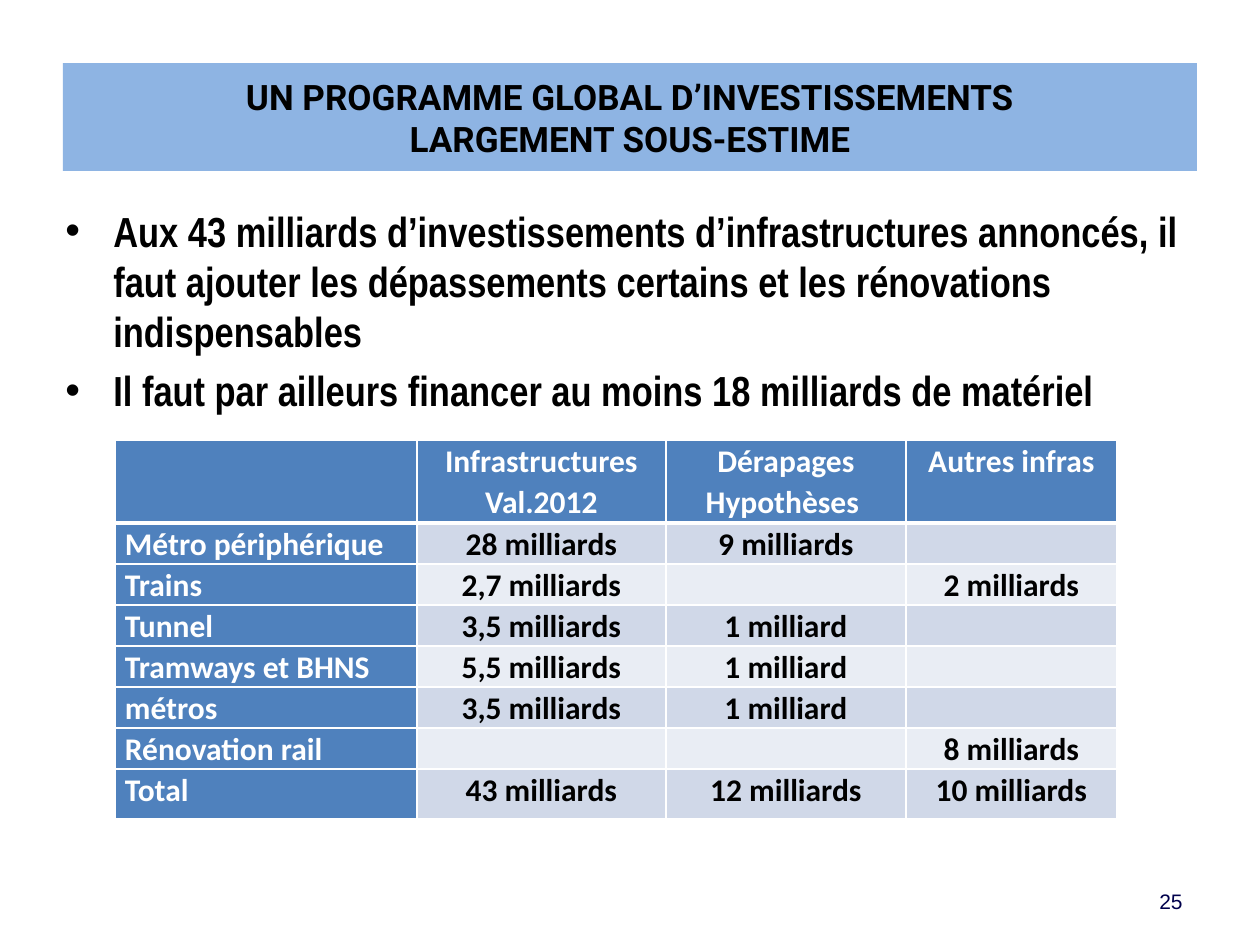
from lxml import etree
from pptx import Presentation
from pptx.dml.color import RGBColor
from pptx.enum.shapes import MSO_SHAPE
from pptx.enum.text import MSO_ANCHOR, PP_ALIGN
from pptx.oxml.ns import qn
from pptx.util import Pt

SCALE = 914400 // 126
RECT = MSO_SHAPE.RECTANGLE
MIDDLE = MSO_ANCHOR.MIDDLE
LEFT, CENTER, RIGHT = PP_ALIGN.LEFT, PP_ALIGN.CENTER, PP_ALIGN.RIGHT

BLACK, WHITE, NAVY = "000000", "FFFFFF", "00004C"
SKY, BLUE = "8EB4E3", "4F81BD"
BANDS = ("D0D8E8", "E9EDF4")

TITLE = "UN PROGRAMME GLOBAL D’INVESTISSEMENTS\vLARGEMENT SOUS-ESTIME"
POINTS = [
    "Aux 43 milliards d’investissements d’infrastructures annoncés, il "
    "faut ajouter les dépassements certains et les rénovations indispensables",
    "Il faut par ailleurs financer au moins 18 milliards de matériel",
]
COSTS = [
    ["", "Infrastructures Val.2012", "Dérapages Hypothèses ", "Autres infras"],
    ["Métro périphérique", "28 milliards", "9 milliards", ""],
    ["Trains", "2,7 milliards", "", "2 milliards"],
    ["Tunnel", "3,5 milliards", "1 milliard", ""],
    ["Tramways et BHNS", "5,5 milliards", "1 milliard", ""],
    ["métros", "3,5 milliards", "1 milliard", ""],
    ["Rénovation rail", "", "", "8 milliards"],
    ["Total", "43 milliards", "12 milliards", "10 milliards"],
]
WIDTHS = [302, 249, 240, 211]
HEIGHTS = [83] + [41] * 6 + [50]


def px(n):
    return n * SCALE


def rgb(code):
    return RGBColor.from_string(code)


class Deck:
    def __init__(self, wide, high):
        self.prs = Presentation()
        self.prs.slide_width, self.prs.slide_height = px(wide), px(high)
        self.slide = self.prs.slides.add_slide(self.prs.slide_layouts[6])
        self.shapes = self.slide.shapes

    def style(self, frame, font, size, color, align=LEFT, bold=True):
        for para in frame.paragraphs:
            para.alignment = align
            for run in para.runs:
                run.font.name = font
                run.font.size = Pt(size)
                run.font.bold = bold
                run.font.color.rgb = rgb(color)

    def banner(self, box, text, fill):
        shape = self.shapes.add_shape(RECT, *map(px, box))
        shape.shadow.inherit = False
        shape.fill.solid()
        shape.fill.fore_color.rgb = rgb(fill)
        shape.line.fill.background()
        frame = shape.text_frame
        frame.vertical_anchor = MIDDLE
        frame.text = text
        self.style(frame, "Roboto", 20, BLACK, CENTER)

    def text(self, box, text):
        frame = self.shapes.add_textbox(*map(px, box)).text_frame
        frame.word_wrap = True
        frame.text = text
        return frame

    def bullets(self, box, items, indent):
        frame = self.text(box, "\n".join(items))
        self.style(frame, "Arial Narrow", 24, BLACK)
        for para in frame.paragraphs:
            para.space_before = Pt(4.8)
            props = para._p.get_or_add_pPr()
            props.set("marL", str(px(indent)))
            props.set("indent", str(-px(indent)))
            etree.SubElement(props, qn("a:buFont"), typeface="Arial")
            etree.SubElement(props, qn("a:buChar"), char="•")

    def number(self, box, text):
        frame = self.text(box, text)
        frame.vertical_anchor = MIDDLE
        self.style(frame, "Arial", 12, NAVY, RIGHT, False)

    def border(self, cell, side, width):
        props = cell._tc.get_or_add_tcPr()
        line = etree.SubElement(props, qn("a:ln" + side), w=str(Pt(width)))
        fill = etree.SubElement(line, qn("a:solidFill"))
        etree.SubElement(fill, qn("a:srgbClr"), val=WHITE)

    def cell(self, cell, text, row, col):
        cell.margin_left = cell.margin_right = px(10)
        cell.margin_top = cell.margin_bottom = 0
        # The rule under the header row is thicker
        thick = {(0, "B"), (1, "T")}
        for side in "LRTB":
            self.border(cell, side, 3 if (row, side) in thick else 1)
        head = row == 0 or col == 0
        cell.fill.solid()
        cell.fill.fore_color.rgb = rgb(BLUE if head else BANDS[(row - 1) % 2])
        frame = cell.text_frame
        frame.text = text
        frame.paragraphs[0].line_spacing = 1.07
        self.style(frame, "Calibri", 18, WHITE if head else BLACK,
                   CENTER if col else LEFT)

    def table(self, left, top, widths, heights, data):
        box = (left, top, sum(widths), sum(heights))
        table = self.shapes.add_table(
            len(heights), len(widths), *map(px, box)).table
        for col, wide in zip(table.columns, widths):
            col.width = px(wide)
        for row, high in zip(table.rows, heights):
            row.height = px(high)
        for r, line in enumerate(data):
            for c, text in enumerate(line):
                self.cell(table.cell(r, c), text, r, c)


def main():
    deck = Deck(1260, 945)
    # Title and key points
    deck.banner((63, 63, 1134, 108), TITLE, SKY)
    deck.bullets((53, 199, 1164, 645), POINTS, 48)
    # Page number
    deck.number((901, 876, 294, 50), "25")
    # Cost table
    deck.table(115, 440, WIDTHS, HEIGHTS, COSTS)
    deck.prs.save("out.pptx")


if __name__ == "__main__":
    main()
